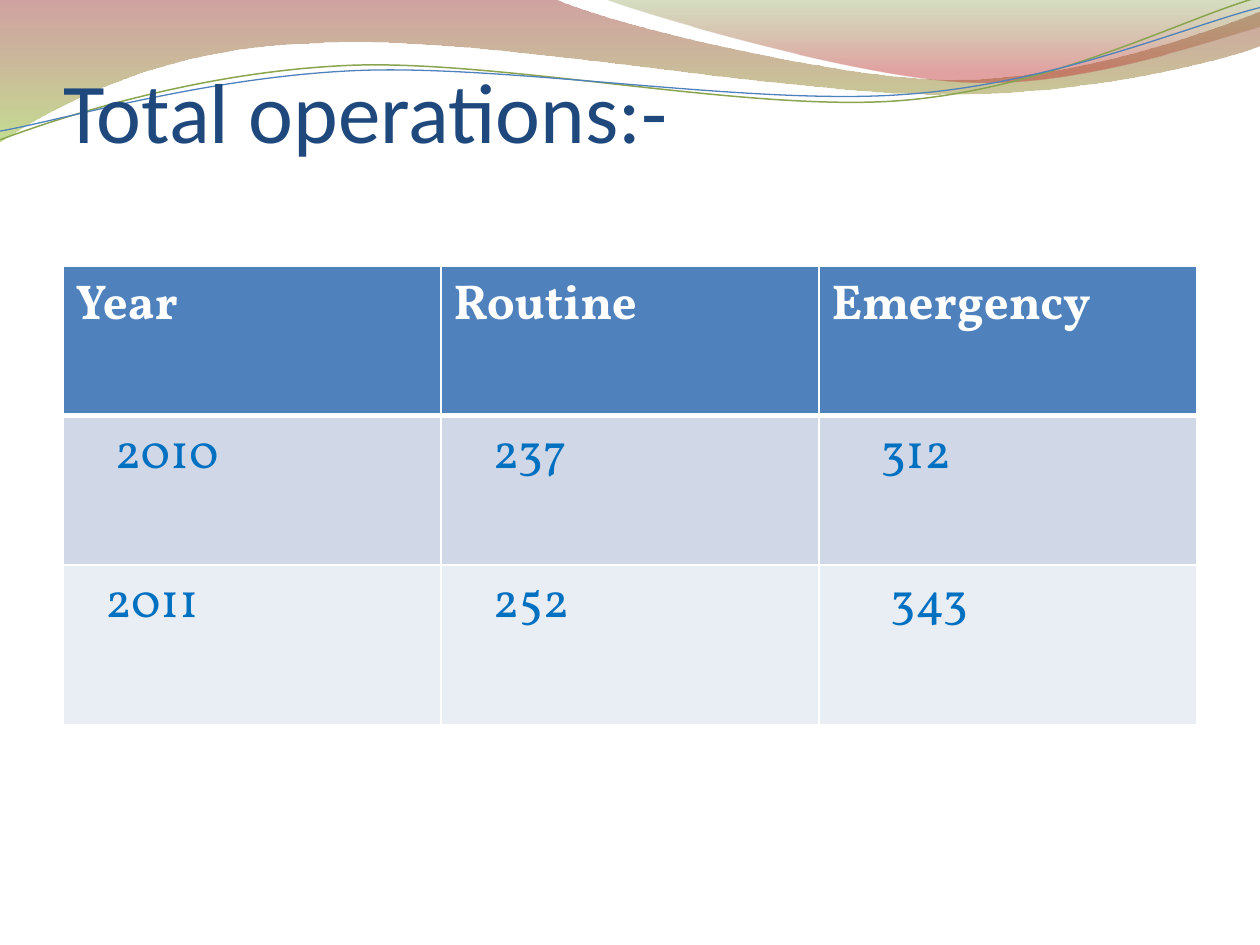
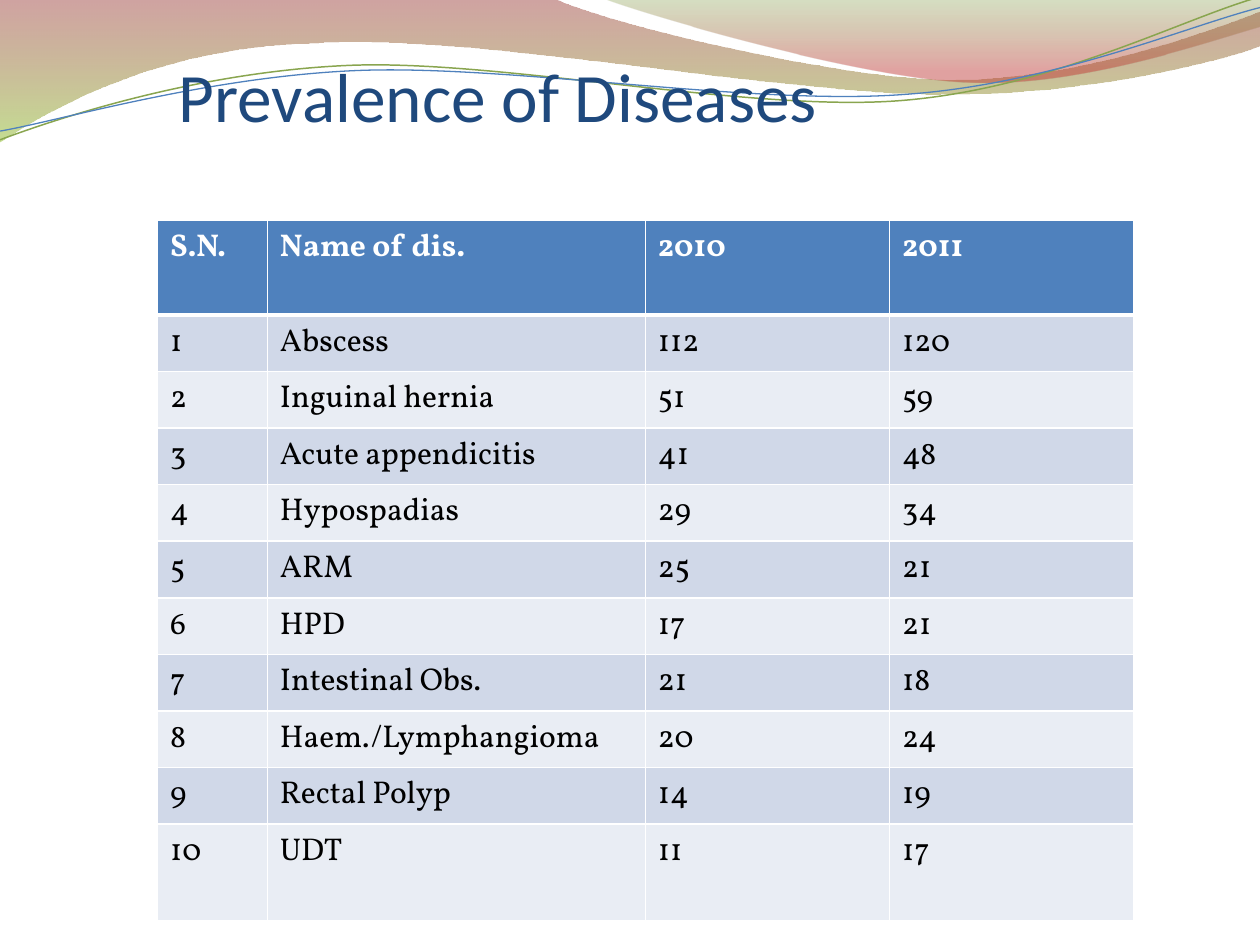
from lxml.etree import SubElement
from pptx import Presentation
from pptx.dml.color import RGBColor
from pptx.enum.text import MSO_ANCHOR, MSO_AUTO_SIZE, PP_ALIGN
from pptx.oxml.ns import qn
from pptx.util import Pt

WHITE = RGBColor(0xFF, 0xFF, 0xFF)
BLACK = RGBColor(0x00, 0x00, 0x00)
NAVY = RGBColor(0x1F, 0x49, 0x7D)
HEADER_BLUE = RGBColor(0x4F, 0x81, 0xBD)
FIGURE_BLUE = RGBColor(0x00, 0x70, 0xC0)
BANDS = RGBColor(0xD0, 0xD8, 0xE8), RGBColor(0xE9, 0xED, 0xF4)
MAROON = RGBColor(0x97, 0x33, 0x30)
LIME = RGBColor(0x95, 0xC2, 0x38)
MOSS = RGBColor(0x76, 0x95, 0x37)
RED = RGBColor(0xBE, 0x33, 0x30)
LINE_GREEN = RGBColor(0x89, 0xA5, 0x4F)
TITLE_FONT, TABLE_FONT = "Calibri", "Vollkorn"
CELL_INSET = 7.2

WAVES = [
    {
        "outline": [
            [(0, 0)],
            [(316.8, -0.7)],
            [(342.7, 12.2), (478.1, 45.4), (545.8, 45.4)],
            [(614.2, 45.4), (689.8, 18.7), (720, 6.5)],
            [(720.7, 25.9)],
            [(707.8, 31.7), (626.4, 54.7), (537.1, 54)],
            [(446.4, 54), (275, 20.2), (185, 24.5)],
            [(92.9, 25.9), (33.1, 59.8), (-0.7, 81.4)],
            [(0, 0)],
        ],
        "gradient": [(0, MAROON, 45), (1, LIME, 55)],
    },
    {
        "outline": [
            [(344.9, -0.7)],
            [(366.5, 7.9), (491, 44.6), (553.7, 46.8)],
            [(616.3, 49.7), (691.9, 23), (720, 15.1)],
            [(720, 0)],
            [(344.9, -0.7)],
        ],
        "gradient": [(0, MOSS, 30), (0.8, RED, 45)],
    },
    {
        "outline": [
            [(0, 79.9)],
            [(34.6, 67), (113.8, 41), (199.4, 37.4)],
            [(284.4, 33.8), (427, 64.1), (513.4, 57.6)],
            [(599.8, 51.1), (675.4, 10.8), (718.6, -1.4)],
        ],
        "line": (LINE_GREEN, 0.85),
    },
    {
        "outline": [
            [(0, 74.9)],
            [(33.8, 69.1), (118.1, 43.9), (203.8, 40.3)],
            [(290.2, 36.7), (429.8, 60.5), (516.2, 54)],
            [(601.9, 48.2), (677.5, 15.1), (720, 4.3)],
        ],
        "line": (HEADER_BLUE, 0.75),
    },
]

SLIDES = [
    {
        "title": "Total operations:-",
        "title_box": (36, 55.4, 648, 90),
        "title_size": 48.6,
        "title_bottom": 53.6,
        "table_at": (36, 152.4),
        "columns": [216, 216, 216],
        "heights": [85.2, 85.2, 91.2],
        "rows": [
            ("Year", "Routine", "Emergency"),
            ("2010", "237", "312"),
            ("2011", "252", "343"),
        ],
        "indents": [(0, 0, 0), (22.5, 22.5, 28), (17, 22.5, 33.5)],
        "size": 28,
        "body_color": FIGURE_BLUE,
    },
    {
        "title": "Prevalence of Diseases",
        "title_box": (102.2, 18, 540, 59.8),
        "title_size": 39.6,
        "title_bottom": 0,
        "table_at": (90, 126),
        "columns": [62.8, 216, 139.6, 139.6],
        "heights": [54] + [29.5] * 9 + [55.4],
        "rows": [
            ("S.N.", "Name of dis.", "2010", "2011"),
            ("1", "Abscess", "112", "120"),
            ("2", "Inguinal hernia", "51", "59"),
            ("3", "Acute appendicitis", "41", "48"),
            ("4", "Hypospadias", "29", "34"),
            ("5", "ARM", "25", "21"),
            ("6", "HPD", "17", "21"),
            ("7", "Intestinal Obs.", "21", "18"),
            ("8", "Haem./Lymphangioma", "20", "24"),
            ("9", "Rectal Polyp", "14", "19"),
            ("10", "UDT", "11", "17"),
        ],
        "indents": [(0, 0, 0, 0)] * 11,
        "size": 18,
        "body_color": BLACK,
    },
]


def bend(ribbon, segments):
    edges = iter(list(ribbon.element.iter(qn("a:lnTo"))))
    for segment in segments:
        first, *rest = [next(edges) for _ in segment]
        if rest:
            curve = SubElement(first.getparent(), qn("a:cubicBezTo"))
            first.addprevious(curve)
            for edge in (first, *rest):
                curve.append(edge[0])
                edge.getparent().remove(edge)


def add_wave(slide, layout, wave):
    start, *segments = wave["outline"]
    builder = slide.shapes.build_freeform(*map(Pt, start[0]))
    builder.add_line_segments([(Pt(x), Pt(y)) for segment in segments for x, y in segment],
                              close="gradient" in wave)
    ribbon = builder.convert_to_shape()
    bend(ribbon, segments)
    ribbon.shadow.inherit = False
    if "gradient" in wave:
        ribbon.line.fill.background()
        ribbon.fill.gradient()
        ribbon.fill.gradient_angle = 270
        for stop, (position, color, _) in zip(ribbon.fill.gradient_stops, wave["gradient"]):
            stop.position = position
            stop.color.rgb = color
        for stop, (_, _, opacity) in zip(ribbon.element.iter(qn("a:gs")), wave["gradient"]):
            SubElement(stop[0], qn("a:alpha"), val=str(opacity * 1000))
    else:
        color, width = wave["line"]
        ribbon.fill.background()
        ribbon.line.color.rgb = color
        ribbon.line.width = Pt(width)
    layout.shapes.element.append(ribbon.element)


def style_font(paragraph, name, size, color, bold=False):
    for run in paragraph.runs:
        run.font.name = name
        run.font.size = Pt(size)
        run.font.color.rgb = color
        run.font.bold = bold


def place_title(slide, content):
    title = slide.shapes.title
    title.left, title.top, title.width, title.height = map(Pt, content["title_box"])
    frame = title.text_frame
    frame.text = content["title"]
    frame.word_wrap = True
    frame.auto_size = MSO_AUTO_SIZE.NONE
    frame.vertical_anchor = MSO_ANCHOR.BOTTOM
    frame.margin_left = frame.margin_right = 0
    frame.margin_top = Pt(3.6)
    frame.margin_bottom = Pt(content["title_bottom"])
    frame.paragraphs[0].alignment = PP_ALIGN.LEFT
    style_font(frame.paragraphs[0], TITLE_FONT, content["title_size"], NAVY)


def set_borders(cell, row):
    properties = cell._tc.get_or_add_tcPr()
    widths = {"L": 1, "R": 1, "T": 3 if row == 1 else 1, "B": 3 if row == 0 else 1}
    for side, width in widths.items():
        border = SubElement(properties, qn(f"a:ln{side}"), w=str(Pt(width)))
        solid = SubElement(border, qn("a:solidFill"))
        SubElement(solid, qn("a:srgbClr"), val=str(WHITE))


def add_grid(slide, content):
    rows, columns, heights = content["rows"], content["columns"], content["heights"]
    left, top = content["table_at"]
    grid = slide.shapes.add_table(len(rows), len(columns), Pt(left), Pt(top),
                                  Pt(sum(columns)), Pt(sum(heights))).table
    for column, width in zip(grid.columns, columns):
        column.width = Pt(width)
    for r, (row, height) in enumerate(zip(rows, heights)):
        grid.rows[r].height = Pt(height)
        header = r == 0
        for c, words in enumerate(row):
            cell = grid.cell(r, c)
            cell.text_frame.text = words
            cell.margin_left = Pt(CELL_INSET + content["indents"][r][c])
            set_borders(cell, r)
            cell.fill.solid()
            cell.fill.fore_color.rgb = HEADER_BLUE if header else BANDS[(r - 1) % 2]
            style_font(cell.text_frame.paragraphs[0], TABLE_FONT, content["size"],
                       WHITE if header else content["body_color"], header)


def main():
    deck = Presentation()
    deck.slide_width, deck.slide_height = Pt(720), Pt(540)
    layout = deck.slide_layouts.get_by_name("Title Only")
    for content in SLIDES:
        slide = deck.slides.add_slide(layout)
        place_title(slide, content)
        add_grid(slide, content)
    for wave in WAVES:
        add_wave(deck.slides[0], layout, wave)
    deck.save("out.pptx")


if __name__ == "__main__":
    main()
